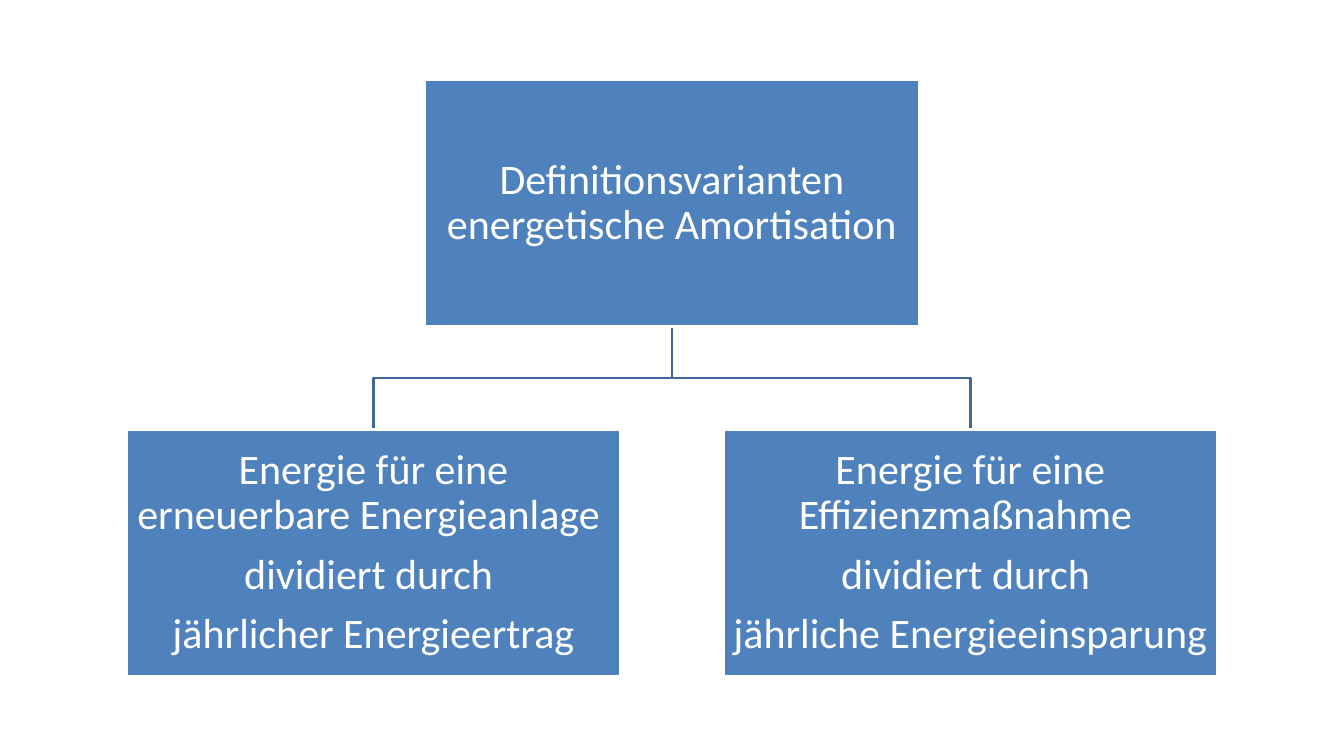
from pptx import Presentation
from pptx.dml.color import RGBColor
from pptx.enum.shapes import MSO_SHAPE
from pptx.enum.text import MSO_ANCHOR, PP_ALIGN
from pptx.util import Inches, Pt

COLORS = {"box": "4F81BD", "branch": "3F6797", "white": "FFFFFF"}
SLIDE_W, SLIDE_H = 13.33, 7.5
BOX_W, BOX_H = 4.9, 2.45
COLUMN_STEP = 2.96
ROW_TOPS = (0.79, 4.26)

ROOT = ["Definitionsvarianten energetische Amortisation"]
VARIANTS = {
    -1: ["Energie für eine erneuerbare Energieanlage ", "dividiert durch ",
         "jährlicher Energieertrag"],
    1: ["Energie für eine Effizienzmaßnahme ", "dividiert durch ",
        "jährliche Energieeinsparung"],
}


def column_center(column):
    """Return the horizontal centre of a column counted from the slide's middle."""
    return SLIDE_W / 2 + column * COLUMN_STEP


def style_line(shape, color, width=2):
    """Set the outline of a shape and remove its shadow."""
    shape.shadow.inherit = False
    shape.line.color.rgb = RGBColor.from_string(COLORS[color])
    shape.line.width = Pt(width)


def write(frame, lines, size=30, font="Calibri", color="white",
          align=PP_ALIGN.CENTER, line_spacing=0.9, space_after=10):
    """Fill a text frame with one formatted paragraph per line."""
    frame.word_wrap = True
    frame.vertical_anchor = MSO_ANCHOR.MIDDLE
    frame.margin_left = frame.margin_right = Inches(0.02)
    frame.margin_top = frame.margin_bottom = Inches(0.02)
    for index, line in enumerate(lines):
        paragraph = frame.add_paragraph() if index else frame.paragraphs[0]
        paragraph.alignment = align
        paragraph.line_spacing = line_spacing
        paragraph.space_after = Pt(space_after)
        run = paragraph.add_run()
        run.text = line
        run.font.size = Pt(size)
        run.font.name = font
        run.font.color.rgb = RGBColor.from_string(COLORS[color])


def add_branch(slide, column):
    """Draw the elbow line from the root box to a variant box."""
    start, end = ROW_TOPS[0] + BOX_H, ROW_TOPS[1]
    middle = (start + end) / 2
    root_x, variant_x = column_center(0), column_center(column)
    outline = slide.shapes.build_freeform(
        Inches(root_x), Inches(start))
    bends = [(root_x, middle), (variant_x, middle), (variant_x, end)]
    outline.add_line_segments(
        [(Inches(x), Inches(y)) for x, y in bends], close=False)
    branch = outline.convert_to_shape()
    branch.fill.background()
    style_line(branch, "branch")


def add_box(slide, column, row, lines):
    """Add a filled box with text at a column and row of the tree."""
    box = slide.shapes.add_shape(
        MSO_SHAPE.RECTANGLE, Inches(column_center(column) - BOX_W / 2),
        Inches(ROW_TOPS[row]), Inches(BOX_W), Inches(BOX_H))
    box.fill.solid()
    box.fill.fore_color.rgb = RGBColor.from_string(COLORS["box"])
    style_line(box, "white")
    write(box.text_frame, lines)


def main():
    """Build the tree of definitions and save it."""
    deck = Presentation()
    deck.slide_width, deck.slide_height = Inches(SLIDE_W), Inches(SLIDE_H)
    slide = deck.slides.add_slide(deck.slide_layouts[6])
    for column in VARIANTS:
        add_branch(slide, column)
    add_box(slide, 0, 0, ROOT)
    for column, lines in VARIANTS.items():
        add_box(slide, column, 1, lines)
    deck.save("out.pptx")


if __name__ == "__main__":
    main()
